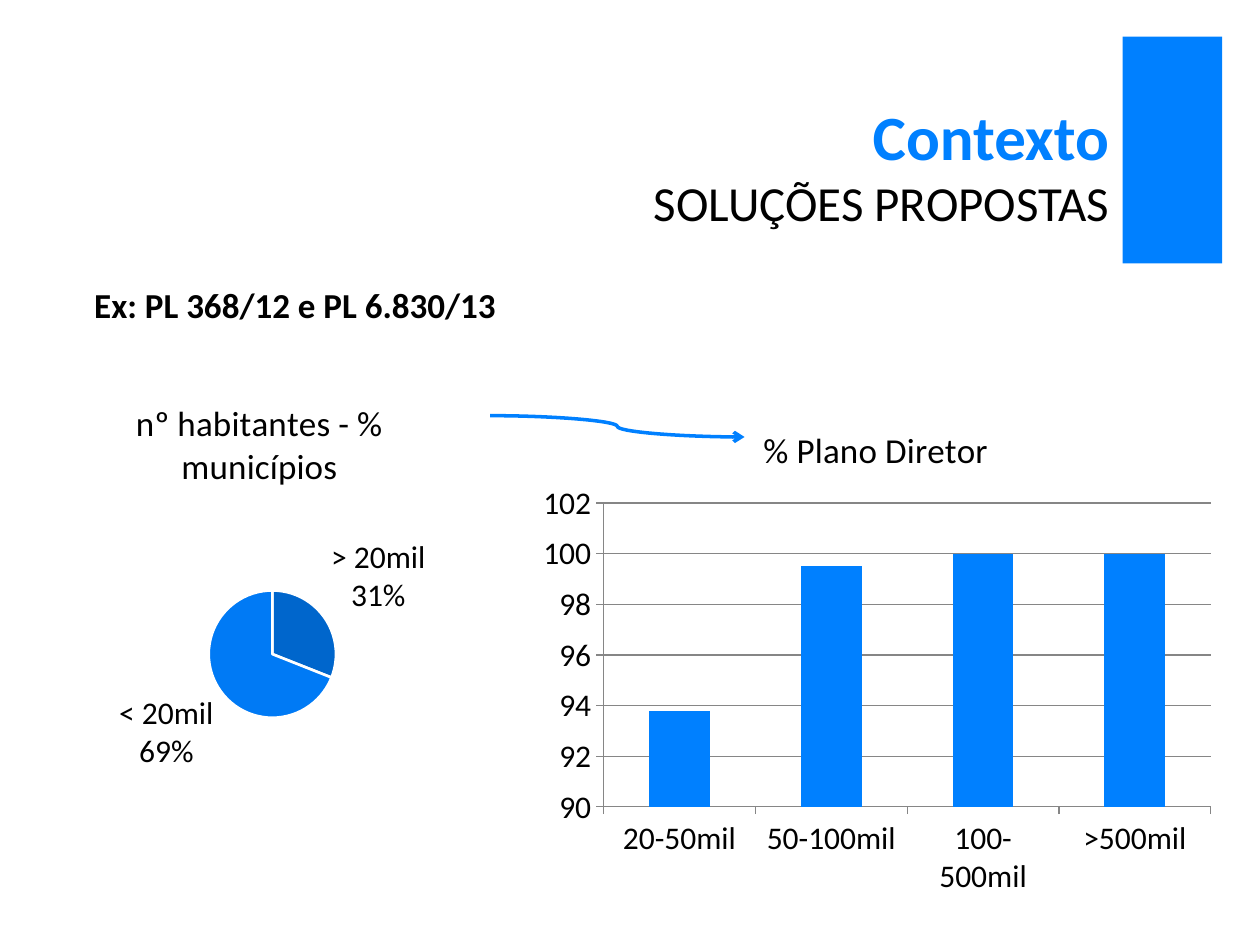
from lxml import etree
from pptx import Presentation
from pptx.chart.data import CategoryChartData
from pptx.dml.color import RGBColor
from pptx.enum.chart import XL_CHART_TYPE, XL_LABEL_POSITION, XL_TICK_MARK
from pptx.enum.shapes import MSO_CONNECTOR, MSO_SHAPE
from pptx.enum.text import MSO_ANCHOR, PP_ALIGN
from pptx.oxml.ns import qn
from pptx.util import Cm, Pt

COLUMN, PIE = XL_CHART_TYPE.COLUMN_CLUSTERED, XL_CHART_TYPE.PIE
OUTSIDE_END = XL_LABEL_POSITION.OUTSIDE_END
TICK_OUT, TICK_NONE = XL_TICK_MARK.OUTSIDE, XL_TICK_MARK.NONE
CURVE, RECTANGLE = MSO_CONNECTOR.CURVE, MSO_SHAPE.RECTANGLE
BOTTOM, RIGHT = MSO_ANCHOR.BOTTOM, PP_ALIGN.RIGHT

BLUE = RGBColor(0x00, 0x80, 0xFF)
PIE_DARK = RGBColor(0x00, 0x66, 0xCC)
PIE_LIGHT = RGBColor(0x00, 0x7A, 0xF5)
BLACK = RGBColor(0, 0, 0)
WHITE = RGBColor(0xFF, 0xFF, 0xFF)
GREY = RGBColor(0x86, 0x86, 0x86)
FONT = "Calibri"

# Content: text, size, bold, colour
HEADING = [("Contexto", 36, True, BLUE), ("SOLUÇÕES PROPOSTAS", 28, False, BLACK)]
EXAMPLE = "Ex: PL 368/12 e PL 6.830/13"

# Box is left, top, width, height in cm; plot is the same in fractions of the chart
MASTER_PLAN = {
    "kind": COLUMN,
    "title": "% Plano Diretor",
    "values": {"20-50mil": 93.8, "50-100mil": 99.5, "100-500mil": 100, ">500mil": 100},
    "box": (10.62, 8.1, 14.07, 10.21),
    "plot": (0.11, 0.2, 0.87, 0.6),
}
TOWNS = {
    "kind": PIE,
    "title": "nº habitantes - % municípios",
    "values": {"> 20mil": 31, "< 20mil": 69},
    "box": (0, 7.6, 10.46, 8.28),
    "plot": (0.4, 0.52, 0.25, 0.31),
}


def style(font, size, color=BLACK, bold=False):
    font.name, font.size, font.bold = FONT, Pt(size), bold
    font.color.rgb = color


def place_plot(chart, plot):
    area = chart._chartSpace.chart.plotArea
    for old in area.findall(qn("c:layout")):
        area.remove(old)
    layout = etree.Element(qn("c:layout"))
    manual = etree.SubElement(layout, qn("c:manualLayout"))
    settings = [("layoutTarget", "inner"), ("xMode", "edge"), ("yMode", "edge")]
    settings += zip("xywh", map(str, plot))
    for name, value in settings:
        etree.SubElement(manual, qn(f"c:{name}")).set("val", value)
    area.insert(0, layout)


def add_chart(page, details):
    data = CategoryChartData()
    data.categories = list(details["values"])
    data.add_series("Series 1", list(details["values"].values()))
    frame = page.shapes.add_chart(details["kind"], *map(Cm, details["box"]), data)
    chart = frame.chart
    style(chart.font, 18)
    chart.has_legend = False
    heading = chart.chart_title.text_frame
    heading.text = details["title"]
    style(heading.paragraphs[0].font, 20)
    place_plot(chart, details["plot"])
    return chart


deck = Presentation()
deck.slide_width, deck.slide_height = Cm(25.4), Cm(19.05)
page = deck.slides.add_slide(deck.slide_layouts[5])

# Title and accent block
title = page.shapes.title
title.left, title.top, title.width, title.height = Cm(1.12), Cm(1.19), Cm(21.49), Cm(3.61)
title.text_frame.vertical_anchor = BOTTOM
title.text_frame.text = "\n".join(line[0] for line in HEADING)
for para, (_, size, bold, color) in zip(title.text_frame.paragraphs, HEADING):
    para.alignment = RIGHT
    para.space_before = Pt(0)
    style(para.font, size, color, bold)

accent = page.shapes.add_shape(RECTANGLE, Cm(22.63), Cm(0.74), Cm(2.01), Cm(4.57))
accent.shadow.inherit = False
accent.fill.solid()
accent.fill.fore_color.rgb = BLUE
accent.line.fill.background()

# Column chart
chart = add_chart(page, MASTER_PLAN)
columns = chart.plots[0]
columns.gap_width = 150
columns.vary_by_categories = False
fill = columns.series[0].format.fill
fill.solid()
fill.fore_color.rgb = BLUE
scale = chart.value_axis
scale.minimum_scale, scale.maximum_scale, scale.major_unit = 90, 102, 2
scale.has_major_gridlines = True
for axis in (scale, chart.category_axis):
    axis.major_tick_mark, axis.minor_tick_mark = TICK_OUT, TICK_NONE
for line in (scale.format.line, chart.category_axis.format.line,
             scale.major_gridlines.format.line):
    line.color.rgb = GREY
    line.width = Pt(0.75)

# Pie chart
pie = add_chart(page, TOWNS).plots[0]
pie.vary_by_categories = True
for index, color in enumerate((PIE_DARK, PIE_LIGHT)):
    slice_format = pie.series[0].points[index].format
    slice_format.fill.solid()
    slice_format.fill.fore_color.rgb = color
    slice_format.line.color.rgb = WHITE
    slice_format.line.width = Pt(1.5)
pie.has_data_labels = True
labels = pie.data_labels
labels.show_category_name = labels.show_percentage = True
labels.show_value = False
labels.number_format, labels.number_format_is_linked = "0%", False
labels.position = OUTSIDE_END
style(labels.font, 18)
separator = etree.Element(qn("c:separator"))
separator.text = "\n"
labels._element.find(qn("c:showBubbleSize")).addnext(separator)

# Curved arrow from the pie's title to the column chart's
arrow = page.shapes.add_connector(CURVE, Cm(9.88), Cm(8.38), Cm(15.01), Cm(8.81))
arrow.line.color.rgb = BLUE
arrow.line.width = Pt(2)
etree.SubElement(arrow.line._get_or_add_ln(), qn("a:tailEnd")).set("type", "arrow")
etree.SubElement(arrow._element.spPr, qn("a:effectLst"))

# Example line
box = page.shapes.add_textbox(Cm(1.65), Cm(5.59), Cm(8.97), Cm(1.12))
box.text_frame.word_wrap = True
box.text_frame.text = EXAMPLE
style(box.text_frame.paragraphs[0].font, 20, bold=True)

deck.save("out.pptx")
